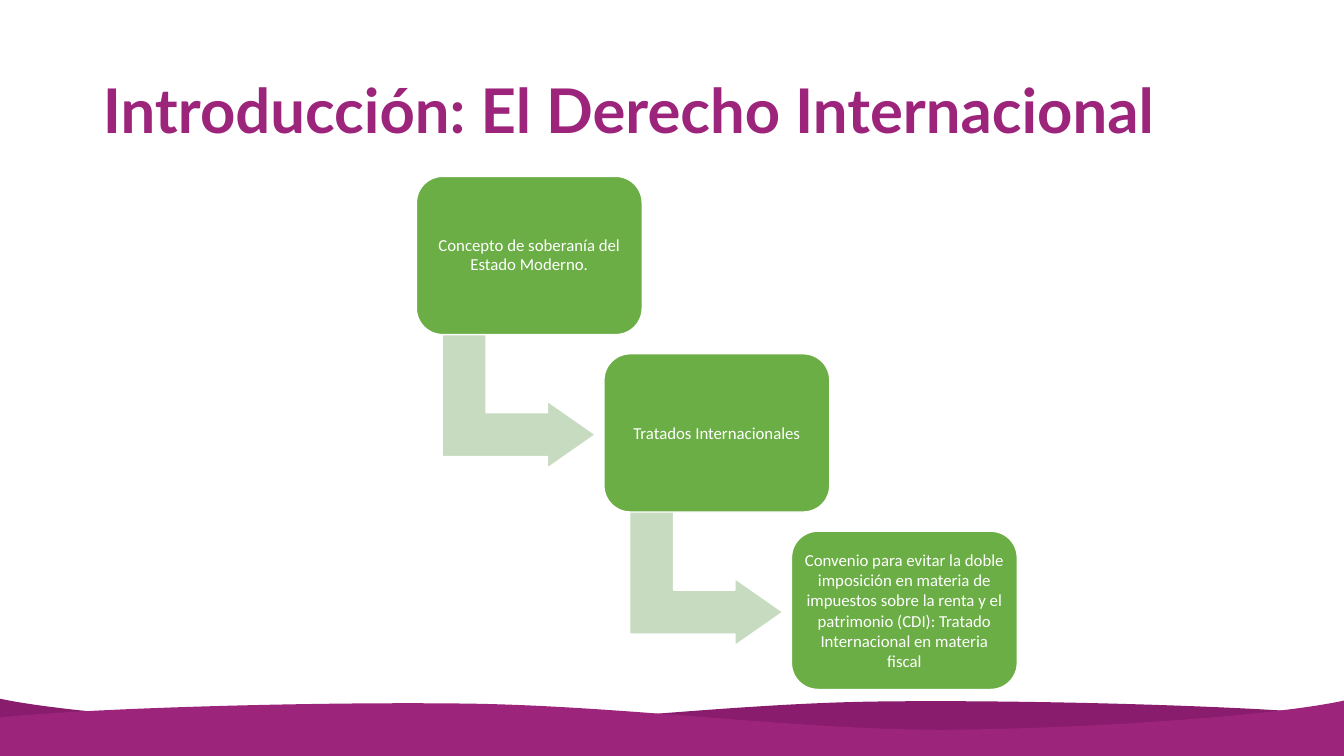
"""Build a slide with a three-step staircase above a wavy footer."""
from lxml.etree import SubElement
from pptx import Presentation
from pptx.dml.color import RGBColor
from pptx.enum.shapes import MSO_SHAPE
from pptx.enum.text import MSO_ANCHOR, MSO_AUTO_SIZE, PP_ALIGN
from pptx.oxml.ns import qn
from pptx.util import Inches, Pt

ROUNDED, BENT_ARROW = MSO_SHAPE.ROUNDED_RECTANGLE, MSO_SHAPE.BENT_UP_ARROW
MIDDLE = MSO_ANCHOR.MIDDLE
LEFT, CENTER = PP_ALIGN.LEFT, PP_ALIGN.CENTER
FIXED = MSO_AUTO_SIZE.NONE

TITLE = "Introducción: El Derecho Internacional"
STEPS = [
    ("Concepto de soberanía del Estado Moderno.", 0.9),
    ("Tratados Internacionales", 1.0),
    ("Convenio para evitar la doble imposición en materia de impuestos sobre "
     "la renta y el patrimonio (CDI): Tratado Internacional en materia fiscal", 1.0),
]
COLORS = {"purple": "9C247B", "dark": "891C6C", "green": "6BAE45",
          "pale": "C7DBC1", "white": "FFFFFF"}
SLIDE_WIDTH, SLIDE_HEIGHT = 13.33, 7.5
TITLE_BOX = (0.92, 0.4, 11.5, 1.45)
FIRST_BOX, BOX_SIZE, STEP = (4.13, 1.75), (2.24, 1.57), (1.86, 1.76)
ARROW_OFFSET, ARROW_SIZE = (0.35, 1.47), (1.33, 1.52)
TITLE_FONT = {"name": "Lato", "size": Pt(44), "bold": True}
STEP_FONT = {"name": "Calibri", "size": Pt(12)}
WAVES = [
    ("dark", (13.33, 7.1), [
        ((12.56, 7.01), (10.26, 6.94), (8.7, 6.96)),
        ((7.15, 6.98), (5.43, 7.22), (3.98, 7.22)),
        ((2.53, 7.21), (0.68, 7.08), (-0.01, 6.93))]),
    ("purple", (-0.01, 7.12), [
        ((0.76, 7.03), (3.06, 6.96), (4.62, 6.98)),
        ((6.18, 7), (7.89, 7.24), (9.35, 7.24)),
        ((10.8, 7.23), (12.65, 7.1), (13.33, 6.95))]),
]


def apply(target, values):
    for name, value in values.items():
        setattr(target, name, value)


def color(name):
    return RGBColor.from_string(COLORS[name])


def paint(shape, fill, outline=None):
    shape.shadow.inherit = False
    shape.fill.solid()
    shape.fill.fore_color.rgb = color(fill)
    if outline:
        shape.line.color.rgb = color(outline)
        shape.line.width = Pt(1)
    else:
        shape.line.fill.background()


def write(shape, text, font, text_color, frame, paragraph_format):
    apply(shape.text_frame, {"word_wrap": True, "auto_size": FIXED,
                             "vertical_anchor": MIDDLE, **frame})
    paragraph = shape.text_frame.paragraphs[0]
    apply(paragraph, paragraph_format)
    run = paragraph.add_run()
    run.text = text
    apply(run.font, font)
    run.font.color.rgb = color(text_color)


def add_wave(slide, fill, start, curves):
    ends = [curve[-1] for curve in curves]
    outline = [start, *ends, (ends[-1][0], SLIDE_HEIGHT), (start[0], SLIDE_HEIGHT)]
    points = [(Inches(x), Inches(y)) for x, y in outline]
    builder = slide.shapes.build_freeform(*points[0])
    builder.add_line_segments(points[1:], close=True)
    shape = builder.convert_to_shape()
    paint(shape, fill)
    segments = list(shape.element.iter(qn("a:lnTo")))
    for segment, curve in zip(segments, curves):
        bezier = SubElement(segment.getparent(), qn("a:cubicBezTo"))
        for x, y in curve:
            SubElement(bezier, qn("a:pt"), x=str(Inches(x) - shape.left),
                       y=str(Inches(y) - shape.top))
        segment.getparent().replace(segment, bezier)


def add_shape(slide, kind, position, size, fill, adjustments):
    shape = slide.shapes.add_shape(kind, *map(Inches, position + size))
    for index, value in enumerate(adjustments):
        shape.adjustments[index] = value
    paint(shape, fill, "white")
    return shape


def main():
    presentation = Presentation()
    presentation.slide_width = Inches(SLIDE_WIDTH)
    presentation.slide_height = Inches(SLIDE_HEIGHT)
    slide = presentation.slides.add_slide(presentation.slide_layouts[5])

    for wave in WAVES:
        add_wave(slide, *wave)

    title = slide.shapes.title
    apply(title, dict(zip(("left", "top", "width", "height"), map(Inches, TITLE_BOX))))
    write(title, TITLE, TITLE_FONT, "purple", {}, {"alignment": LEFT, "line_spacing": 0.9})

    margins = {f"margin_{side}": Inches(0.05) for side in ("left", "top", "right", "bottom")}
    for index, (text, spacing) in enumerate(STEPS):
        position = tuple(start + index * step for start, step in zip(FIRST_BOX, STEP))
        if index < len(STEPS) - 1:
            corner = tuple(a + b for a, b in zip(position, ARROW_OFFSET))
            arrow = add_shape(slide, BENT_ARROW, corner, ARROW_SIZE, "pale", (0.328, 0.25, 0.358))
            arrow.rotation = 90
        box = add_shape(slide, ROUNDED, position, BOX_SIZE, "green", (0.167,))
        write(box, text, STEP_FONT, "white", margins,
              {"alignment": CENTER, "line_spacing": spacing})

    presentation.save("out.pptx")


if __name__ == "__main__":
    main()
